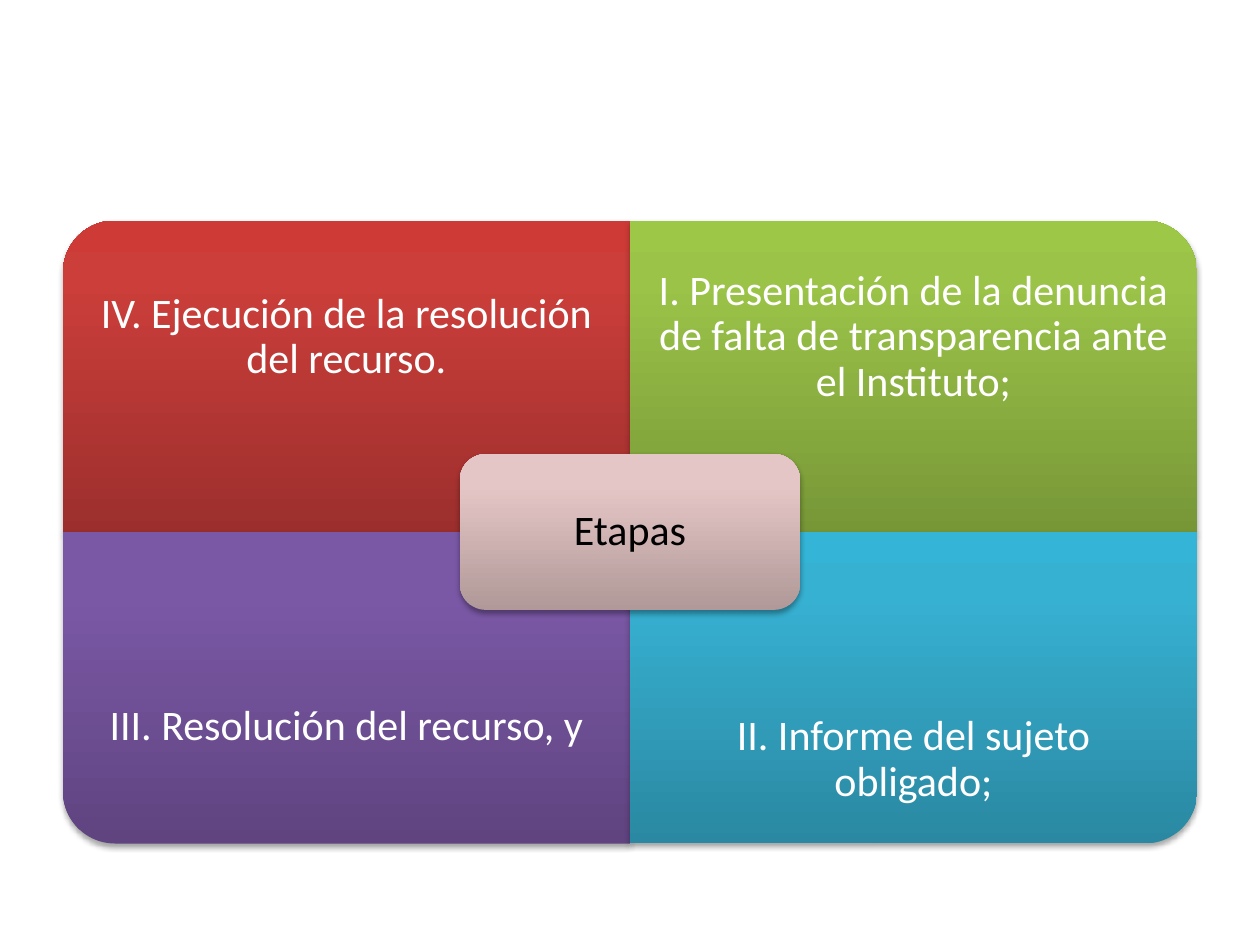
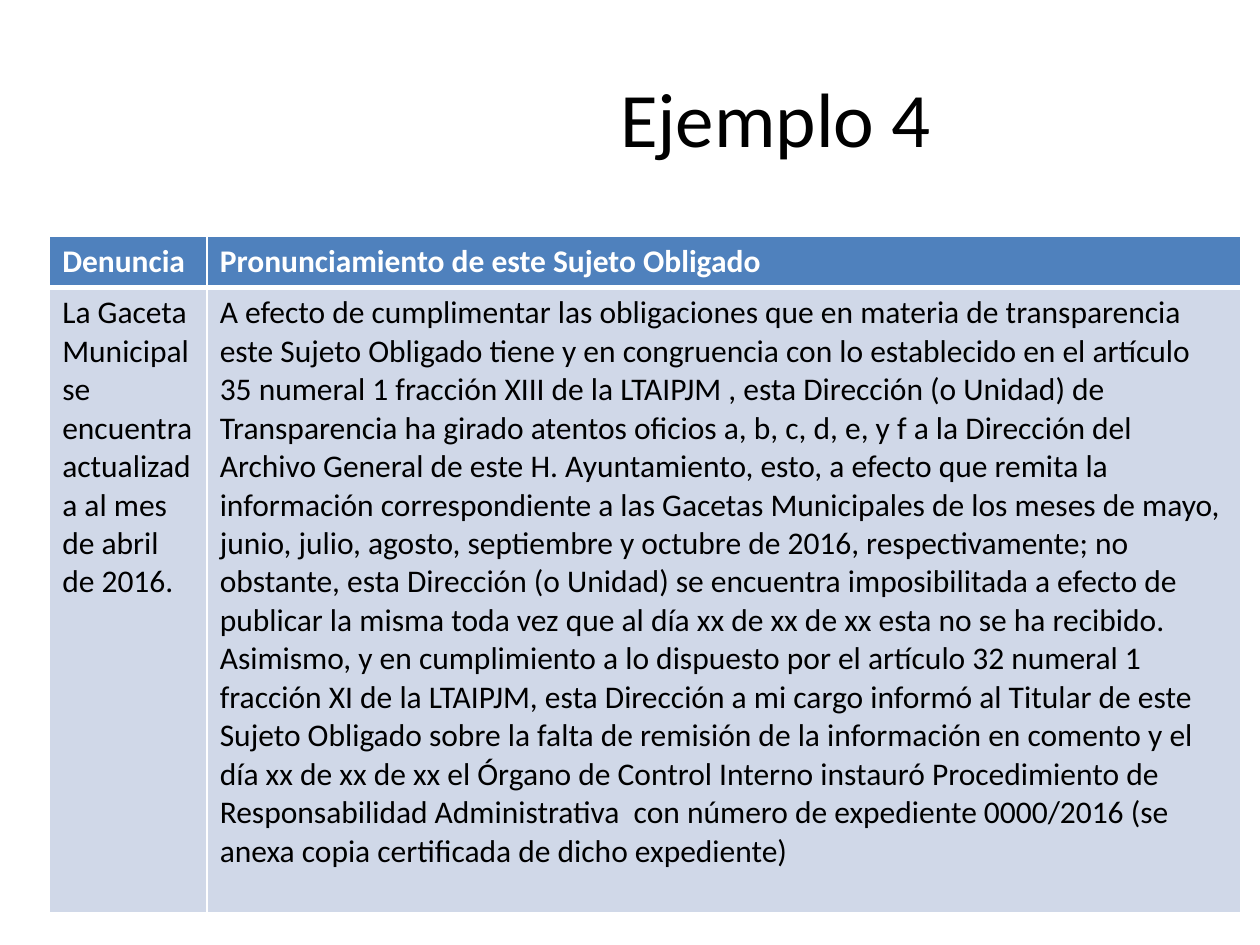
from dataclasses import dataclass

from lxml.etree import SubElement
from pptx import Presentation
from pptx.dml.color import RGBColor
from pptx.enum.shapes import MSO_SHAPE as Preset
from pptx.enum.text import MSO_ANCHOR as Anchor, PP_ALIGN as Align
from pptx.oxml import parse_xml
from pptx.oxml.ns import nsdecls, qn
from pptx.util import Pt


@dataclass(frozen=True)
class Theme:
    font: str = "Calibri"
    white: str = "FFFFFF"
    black: str = "000000"
    header_fill: str = "4F81BD"
    body_fill: str = "D0D8E8"
    title_size: float = 44
    stage_size: float = 24
    table_size: float = 18


@dataclass(frozen=True)
class Box:
    left: float
    top: float
    width: float
    height: float

    def points(self) -> tuple:
        return Pt(self.left), Pt(self.top), Pt(self.width), Pt(self.height)

    def centred(self, width: float, height: float) -> "Box":
        return Box(self.left + (self.width - width) / 2,
                   self.top + (self.height - height) / 2, width, height)


@dataclass(frozen=True)
class Stage:
    text: str
    column: int
    row: int
    rotation: int
    colours: tuple  # bottom, four fifths up, top
    text_drop: float = 0


THEME = Theme()

# Matrix of stages
MATRIX = Box(36, 126, 648, 356)
QUADRANT_WIDTH, QUADRANT_HEIGHT = MATRIX.width / 2, MATRIX.height / 2
STAGE_TEXT_HEIGHT = QUADRANT_HEIGHT * 0.75
STAGE_INSET = 13.5
HUB_COLOURS = ("B09998", "E5C6C6", "E6C7C6")
STAGES = (
    Stage("IV. Ejecución de la resolución del recurso.", 0, 0, 270,
          ("9C2F2D", "CB3E3A", "CE3B37")),
    Stage("I. Presentación de la denuncia de falta de transparencia ante el Instituto;",
          1, 0, 0, ("779737", "9BC348", "9DC746")),
    Stage("III. Resolución del recurso, y", 0, 1, 180,
          ("5F4480", "7B58A6", "7C57A8")),
    Stage("II. Informe del sujeto obligado;", 1, 1, 90,
          ("2A88A2", "37B1D2", "34B4D6"), text_drop=38),
)

# Table of the example
TABLE = Box(28.4, 134.8, 680.4, 387)
COLUMN_WIDTHS = (90, 590.4)
ROW_HEIGHTS = (29.5, 357.5)
HEADINGS = ("Denuncia", "Pronunciamiento de este Sujeto Obligado")
COMPLAINT = "La Gaceta Municipal se encuentra actualizada al mes de abril de 2016."
STATEMENT = (
    "A efecto de cumplimentar las obligaciones que en materia de transparencia este Sujeto "
    "Obligado tiene y en congruencia con lo establecido en el artículo 35 numeral 1 fracción "
    "XIII de la LTAIPJM , esta Dirección (o Unidad) de Transparencia ha girado atentos oficios "
    "a, b, c, d, e, y f a la Dirección del Archivo General de este H. Ayuntamiento, esto, a "
    "efecto que remita la información correspondiente a las Gacetas Municipales de los meses "
    "de mayo, junio, julio, agosto, septiembre y octubre de 2016, respectivamente; no obstante, "
    "esta Dirección (o Unidad) se encuentra imposibilitada a efecto de publicar la misma toda "
    "vez que al día xx de xx de xx esta no se ha recibido.",
    "Asimismo, y en cumplimiento a lo dispuesto por el artículo 32 numeral 1 fracción XI de la "
    "LTAIPJM, esta Dirección a mi cargo informó al Titular de este Sujeto Obligado sobre la "
    "falta de remisión de la información en comento y el día xx de xx de xx el Órgano de "
    "Control Interno instauró Procedimiento de Responsabilidad Administrativa  con número de "
    "expediente 0000/2016 (se anexa copia certificada de dicho expediente)",
)


def write_text(frame, *texts: str, size: float, colour: str = THEME.black,
               bold: bool = False, align: Align = Align.LEFT, spacing: float = 1) -> None:
    for index, text in enumerate(texts):
        paragraph = frame.add_paragraph() if index else frame.paragraphs[0]
        paragraph.alignment = align
        paragraph.line_spacing = spacing
        run = paragraph.add_run()
        run.text = text
        run.font.name = THEME.font
        run.font.size = Pt(size)
        run.font.bold = bold
        run.font.color.rgb = RGBColor.from_string(colour)


def add_label(slide, box: Box, text: str, *, insets: tuple, **text_format) -> None:
    frame = slide.shapes.add_textbox(*box.points()).text_frame
    frame.word_wrap = True
    frame.vertical_anchor = Anchor.MIDDLE
    horizontal, top, bottom = insets
    frame.margin_left = frame.margin_right = Pt(horizontal)
    frame.margin_top, frame.margin_bottom = Pt(top), Pt(bottom)
    write_text(frame, text, align=Align.CENTER, **text_format)


def add_panel(slide, preset: Preset, box: Box, colours: tuple, rotation: int = 0) -> None:
    """Draw a panel with an upright gradient and a soft shadow below."""
    if rotation % 180:
        box = box.centred(box.height, box.width)
    shape = slide.shapes.add_shape(preset, *box.points())
    shape.rotation = rotation
    shape.line.fill.background()
    shape.fill.gradient()
    shape.shadow.inherit = False
    properties = shape._element.spPr
    stops = "".join(f'<a:gs pos="{position}000"><a:srgbClr val="{colour}"/></a:gs>'
                    for position, colour in zip((0, 80, 100), colours))
    properties.replace(properties.find(qn("a:gradFill")), parse_xml(
        f'<a:gradFill {nsdecls("a")} rotWithShape="0"><a:gsLst>{stops}</a:gsLst>'
        '<a:lin ang="16200000" scaled="0"/></a:gradFill>'))
    properties.find(qn("a:effectLst")).append(parse_xml(
        f'<a:outerShdw {nsdecls("a")} blurRad="{Pt(3.1)}" dist="{Pt(1.8)}" dir="5400000" '
        f'rotWithShape="0"><a:srgbClr val="{THEME.black}"><a:alpha val="35000"/>'
        '</a:srgbClr></a:outerShdw>'))


def set_borders(cell, **widths: float) -> None:
    properties = cell._tc.get_or_add_tcPr()
    for side in "LRTB":
        line = SubElement(properties, qn(f"a:ln{side}"), w=str(Pt(widths.get(side, 1))))
        SubElement(SubElement(line, qn("a:solidFill")), qn("a:srgbClr"), val=THEME.white)


def fill_cell(cell, *texts: str, fill: str, borders: dict, **text_format) -> None:
    set_borders(cell, **borders)
    cell.fill.solid()
    cell.fill.fore_color.rgb = RGBColor.from_string(fill)
    write_text(cell.text_frame, *texts, size=THEME.table_size, **text_format)


def build_stages(slide) -> None:
    # Quadrants, each with its outer corner rounded
    for stage in STAGES:
        quadrant = Box(MATRIX.left + stage.column * QUADRANT_WIDTH,
                       MATRIX.top + stage.row * QUADRANT_HEIGHT,
                       QUADRANT_WIDTH, QUADRANT_HEIGHT)
        add_panel(slide, Preset.ROUND_1_RECTANGLE, quadrant, stage.colours, stage.rotation)
        text_top = quadrant.top + stage.row * (QUADRANT_HEIGHT - STAGE_TEXT_HEIGHT)
        add_label(slide, Box(quadrant.left, text_top, QUADRANT_WIDTH, STAGE_TEXT_HEIGHT),
                  stage.text, insets=(STAGE_INSET, STAGE_INSET + stage.text_drop, STAGE_INSET),
                  size=THEME.stage_size, colour=THEME.white, spacing=0.9)

    # Central hub
    hub = MATRIX.centred(QUADRANT_WIDTH * 0.6, QUADRANT_HEIGHT * 0.5)
    add_panel(slide, Preset.ROUNDED_RECTANGLE, hub, HUB_COLOURS)
    add_label(slide, hub.centred(hub.width - 8.7, hub.height - 8.7), "Etapas",
              insets=(7.2, 7.2, 7.2), size=THEME.stage_size, spacing=0.9)


def build_example(slide) -> None:
    # Title
    add_label(slide, Box(202.5, 21.6, 481.5, 90), "Ejemplo 4",
              insets=(7.2, 3.6, 3.6), size=THEME.title_size)

    # Table
    table = slide.shapes.add_table(2, 2, *TABLE.points()).table
    table.first_row = table.horz_banding = False
    for column, width in zip(table.columns, COLUMN_WIDTHS):
        column.width = Pt(width)
    for row, height in zip(table.rows, ROW_HEIGHTS):
        row.height = Pt(height)
    for index, (heading, body) in enumerate(zip(HEADINGS, ((COMPLAINT,), STATEMENT))):
        fill_cell(table.cell(0, index), heading, fill=THEME.header_fill, borders={"B": 3},
                  colour=THEME.white, bold=True)
        fill_cell(table.cell(1, index), *body, fill=THEME.body_fill, borders={"T": 3})


def main() -> None:
    presentation = Presentation()
    presentation.slide_width, presentation.slide_height = Pt(720), Pt(540)
    blank = presentation.slide_layouts[6]
    for build in (build_stages, build_example):
        build(presentation.slides.add_slide(blank))
    presentation.save("out.pptx")


if __name__ == "__main__":
    main()
